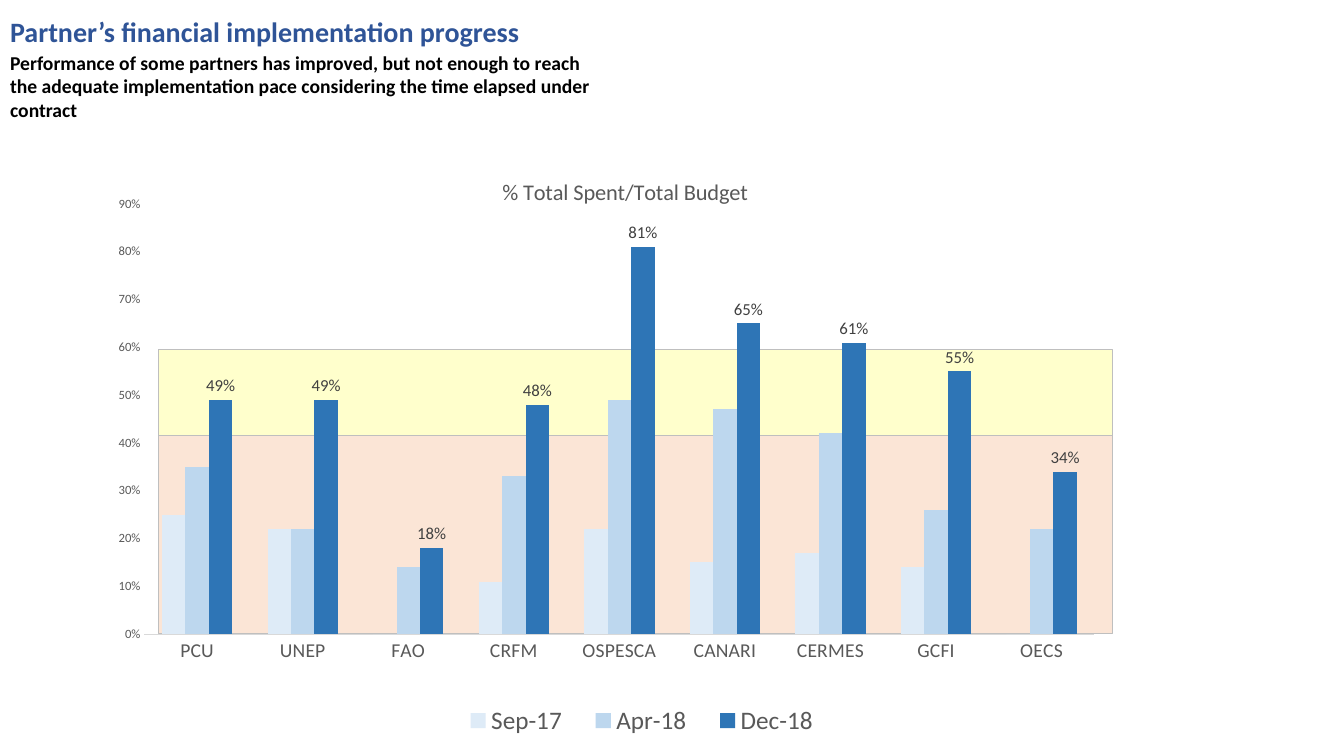
from lxml import etree
from pptx import Presentation
from pptx import util as u
from pptx.chart.data import CategoryChartData
from pptx.dml.color import RGBColor
from pptx.enum import chart as ch, shapes, text
from pptx.oxml import parse_xml
from pptx.oxml.ns import nsdecls, qn

FONT = "Calibri"
HEADING = RGBColor(0x2F, 0x54, 0x97)
BLACK = RGBColor(0, 0, 0)
LABEL = RGBColor(0x40, 0x40, 0x40)
AXIS_TEXT = RGBColor(0x59, 0x59, 0x59)
AXIS_LINE = RGBColor(0xD9, 0xD9, 0xD9)
BAND_LINE = RGBColor(0xBF, 0xBF, 0xBF)
YELLOW = RGBColor(0xFF, 0xFF, 0xCC)
ORANGE = RGBColor(0xFB, 0xE5, 0xD6)
PALE = RGBColor(0xDE, 0xEB, 0xF7)
LIGHT = RGBColor(0xBD, 0xD7, 0xEE)
BLUE = RGBColor(0x2E, 0x75, 0xB6)


def set_font(font, size, color, bold=False):
    font.name, font.size, font.bold = FONT, u.Pt(size), bold
    font.color.rgb = color


def layout_xml(x, y, w=None, h=None, inner=False):
    """Manual chart layout, as shares of the chart's size."""
    values = [("layoutTarget", "inner")] if inner else []
    values += [("xMode", "edge"), ("yMode", "edge"), ("x", x), ("y", y)]
    if w:
        values += [("w", w), ("h", h)]
    body = "".join(f'<c:{tag} val="{val}"/>' for tag, val in values)
    return parse_xml(f'<c:layout {nsdecls("c")}><c:manualLayout>{body}'
                     '</c:manualLayout></c:layout>')


prs = Presentation()
prs.slide_width, prs.slide_height = u.Inches(13.33), u.Inches(7.5)
slide = prs.slides.add_slide(prs.slide_layouts[1])

# Heading and message
heading, message = slide.placeholders
for holder, top, size, color, words in (
    (heading, 0.09, 20, HEADING, "Partner’s financial implementation progress"),
    (message, 0.45, 14, BLACK,
     "Performance of some partners has improved, but not enough to reach the "
     "adequate implementation pace considering the time elapsed under contract"),
):
    holder.left, holder.top = 0, u.Inches(top)
    holder.width, holder.height = u.Inches(6.03), u.Inches(0.58)
    frame = holder.text_frame
    frame.text = words
    frame.word_wrap = True
    frame.auto_size = text.MSO_AUTO_SIZE.NONE
    frame.vertical_anchor = text.MSO_ANCHOR.TOP
    line = frame.paragraphs[0]
    line.alignment = text.PP_ALIGN.LEFT
    line.space_before = u.Pt(0)
    set_font(line.font, size, color, bold=True)
    props = line._p.get_or_add_pPr()
    props.set("marL", "0")
    props.set("indent", "0")
    bullet_off = etree.Element(qn("a:buNone"))
    props.find(qn("a:defRPr")).addprevious(bullet_off)

# Target bands behind the columns, stacked from the top
band_top = 3.47
for height, color in ((0.85, YELLOW), (1.97, ORANGE)):
    band = slide.shapes.add_shape(
        shapes.MSO_SHAPE.RECTANGLE, u.Inches(1.57), u.Inches(band_top),
        u.Inches(9.46), u.Inches(height))
    band.shadow.inherit = False
    band.fill.solid()
    band.fill.fore_color.rgb = color
    band.line.color.rgb = BAND_LINE
    band.line.width = u.Pt(0.75)
    band_top += height

# Spending by partner
spending = CategoryChartData(number_format="0%")
spending.categories = ["PCU", "UNEP", "FAO", "CRFM", "OSPESCA", "CANARI",
                       "CERMES", "GCFI", "OECS"]
periods = (
    ("Sep-17", PALE, (0.25, 0.22, 0, 0.11, 0.22, 0.15, 0.17, 0.14, 0)),
    ("Apr-18", LIGHT, (0.35, 0.22, 0.14, 0.33, 0.49, 0.47, 0.42, 0.26, 0.22)),
    ("Dec-18", BLUE, (0.49, 0.49, 0.18, 0.48, 0.81, 0.65, 0.61, 0.55, 0.34)),
)
for period, _, shares in periods:
    spending.add_series(period, shares)
chart = slide.shapes.add_chart(
    ch.XL_CHART_TYPE.COLUMN_CLUSTERED, u.Inches(0.41), u.Inches(1.12),
    u.Inches(10.54), u.Inches(6.59), spending).chart
set_font(chart.font, 10, BLACK)

columns = chart.plots[0]
columns.gap_width, columns.overlap = 150, 0
columns.vary_by_categories = False
for series, (_, color, _) in zip(columns.series, periods):
    series.format.fill.solid()
    series.format.fill.fore_color.rgb = color

# Values over the latest period only
labels = columns.series[-1].data_labels
labels.show_value = True
labels.number_format, labels.number_format_is_linked = "0%", False
labels.position = ch.XL_LABEL_POSITION.OUTSIDE_END
set_font(labels.font, 12, LABEL)

# Axes
partners, percent = chart.category_axis, chart.value_axis
for axis, size in ((partners, 14), (percent, 9)):
    axis.major_tick_mark = axis.minor_tick_mark = ch.XL_TICK_MARK.NONE
    axis.has_major_gridlines = False
    set_font(axis.tick_labels.font, size, AXIS_TEXT)
partners.format.line.color.rgb = AXIS_LINE
partners.format.line.width = u.Pt(0.75)
percent.format.line.fill.background()
percent.minimum_scale, percent.maximum_scale, percent.major_unit = 0, 0.9, 0.1
percent.tick_labels.number_format = "0%"
percent.tick_labels.number_format_is_linked = False

# Chart title and legend
chart.has_title = True
chart_title = chart.chart_title
chart_title.include_in_layout = False
chart_title.text_frame.text = "% Total Spent/Total Budget"
set_font(chart_title.text_frame.paragraphs[0].font, 16, AXIS_TEXT)
chart.has_legend = True
chart.legend.position = ch.XL_LEGEND_POSITION.BOTTOM
chart.legend.include_in_layout = False
set_font(chart.legend.font, 18, AXIS_TEXT)

# Places of plot, title and legend inside the chart
plot_area = chart._chartSpace.chart.plotArea
for old in plot_area.findall(qn("c:layout")):
    plot_area.remove(old)
plot_area.insert(0, layout_xml(0.097, 0.137, 0.894, 0.648, inner=True))
for part, place in ((chart_title._element, layout_xml(0.43, 0.09)),
                    (chart.legend._element, layout_xml(0.38, 0.88, 0.37, 0.07))):
    for old in part.findall(qn("c:layout")):
        part.remove(old)
    part.find(qn("c:overlay")).addprevious(place)

prs.save("out.pptx")
